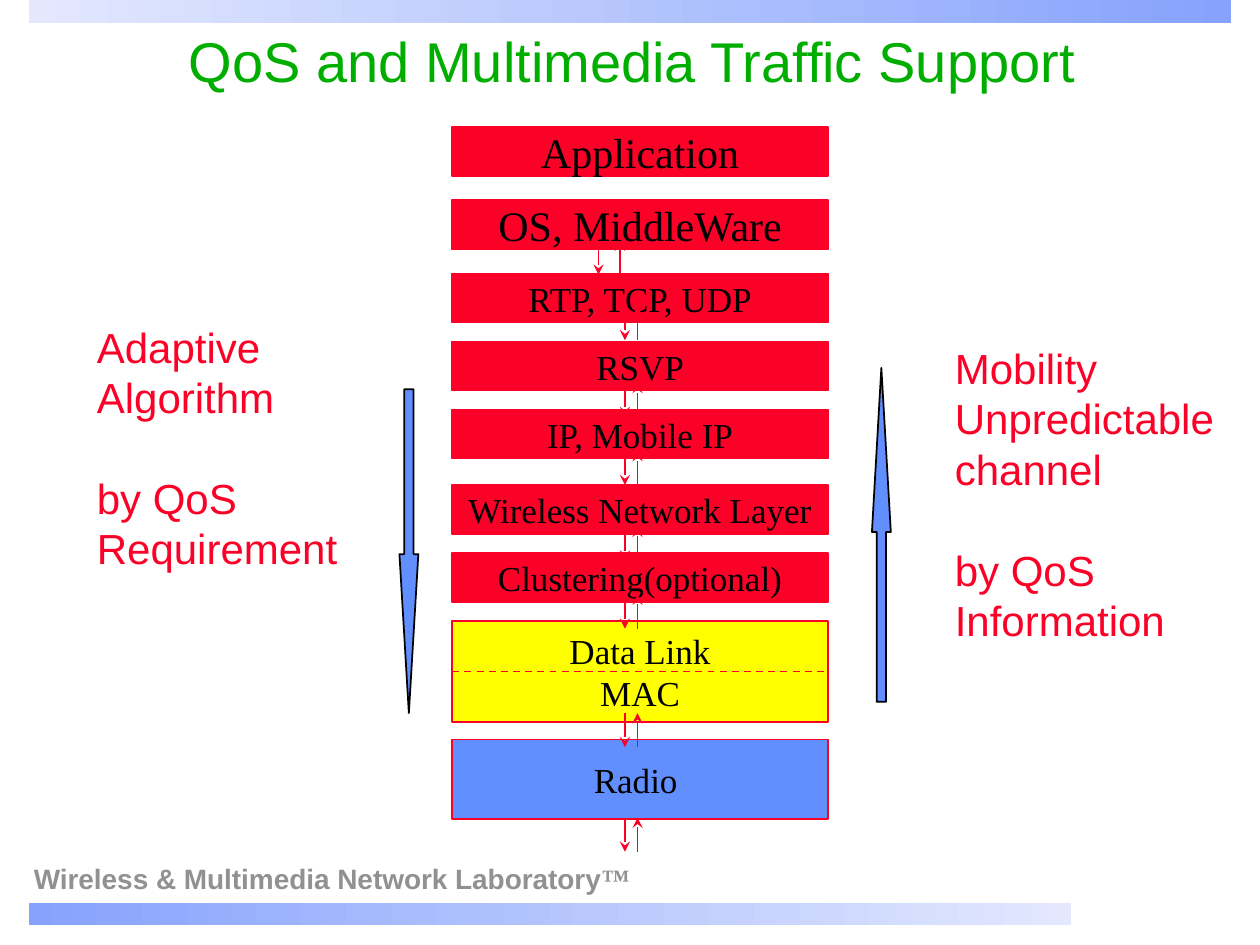
from typing import NamedTuple

import pptx
import pptx.dml.color
import pptx.enum.dml
import pptx.enum.shapes
import pptx.enum.text
import pptx.oxml.ns
import pptx.util
from lxml import etree

Inches = pptx.util.Inches
Pt = pptx.util.Pt
Shapes = pptx.enum.shapes.MSO_SHAPE

COLORS = {
    "red": "FC0128", "yellow": "FFFF00", "blue": "618FFD", "green": "00AE00",
    "black": "000000", "gray": "919191", "band dark": "86A2FC", "band light": "E3E8FE",
}
SANS, SERIF = "Arial", "Times New Roman"
LAYER_LEFT, LAYER_WIDTH, LAYER_HEIGHT = 3.59, 2.98, 0.39
ARROW_LENGTH = 0.27


class Layer(NamedTuple):
    text: str
    top: float
    height: float = LAYER_HEIGHT
    fill: str = "red"
    size: int = 20


class Label(NamedTuple):
    text: str
    left: float
    top: float
    width: float
    height: float
    size: int
    color: str
    wrap: bool = False
    gap_before: int = -1  # index of the paragraph set apart by one line


class BlockArrow(NamedTuple):
    kind: Shapes
    left: float
    top: float
    height: float
    head: float


class Band(NamedTuple):
    left: float
    top: float
    width: float
    height: float
    start: str
    end: str


BANDS = [
    Band(0.23, 7.17, 8.27, 0.17, "band dark", "band light"),
    Band(0.23, 0, 9.54, 0.18, "band light", "band dark"),
]
LABELS = [
    Label("QoS and Multimedia Traffic Support", 1.4, 0.16, 7.52, 0.63, 32, "green", wrap=True),
    Label("Mobility\nUnpredictable\nchannel\nby QoS\nInformation",
          7.48, 2.67, 2.26, 2.5, 24, "red", gap_before=3),
    Label("Adaptive\nAlgorithm\nby QoS\nRequirement",
          0.67, 2.5, 2.11, 2.1, 24, "red", gap_before=2),
]
LAYERS = [
    Layer("Application", 1.01, size=24),
    Layer("OS, MiddleWare", 1.59, size=24),
    Layer("RTP, TCP, UDP", 2.17),
    Layer("RSVP", 2.71),
    Layer("IP, Mobile IP", 3.25),
    Layer("Wireless Network Layer", 3.85),
    Layer("Clustering(optional)", 4.39),
    Layer("Data Link\nMAC", 4.93, 0.8, "yellow"),
    Layer("Radio ", 5.87, 0.63, "blue"),
]
PAIR_TOPS = [2.43, 3.04, 3.58, 4.18, 4.72, 5.66, 6.49]
BLOCK_ARROWS = [
    BlockArrow(Shapes.DOWN_ARROW, 3.17, 3.09, 2.57, 8.41),
    BlockArrow(Shapes.UP_ARROW, 6.92, 2.92, 2.65, 8.68),
]


def rgb(name: str) -> pptx.dml.color.RGBColor:
    return pptx.dml.color.RGBColor.from_string(COLORS[name])


def style_run(span, font: str, size: int, color: str, bold: bool = False) -> None:
    span.font.name = font
    span.font.size = Pt(size)
    span.font.color.rgb = rgb(color)
    span.font.bold = bold


def add_box(page, kind: Shapes, left: float, top: float, width: float, height: float,
            fill: str, line: str):
    box = page.shapes.add_shape(kind, Inches(left), Inches(top), Inches(width), Inches(height))
    box.shadow.inherit = False
    box.fill.solid()
    box.fill.fore_color.rgb = rgb(fill)
    box.line.color.rgb = rgb(line)
    box.line.width = Pt(1)
    return box


def add_layer(page, layer: Layer):
    box = add_box(page, Shapes.RECTANGLE, LAYER_LEFT, layer.top, LAYER_WIDTH, layer.height,
                  layer.fill, "red")
    frame = box.text_frame
    frame.text = layer.text
    frame.word_wrap = False
    frame.vertical_anchor = pptx.enum.text.MSO_ANCHOR.MIDDLE
    for para in frame.paragraphs:
        para.alignment = pptx.enum.text.PP_ALIGN.CENTER
        style_run(para.runs[0], SERIF, layer.size, "black")
    return box


def add_line(page, x1: float, y1: float, x2: float, y2: float, arrow: bool = False):
    line = page.shapes.add_connector(pptx.enum.shapes.MSO_CONNECTOR.STRAIGHT,
                                     Inches(x1), Inches(y1), Inches(x2), Inches(y2))
    line.line.color.rgb = rgb("red")
    line.line.width = Pt(1)
    if arrow:
        tail = etree.SubElement(line.line._get_or_add_ln(), pptx.oxml.ns.qn("a:tailEnd"))
        tail.set("type", "stealth")
    etree.SubElement(line._element.spPr, pptx.oxml.ns.qn("a:effectLst"))
    return line


def add_arrow_pair(page, top: float, down_x: float = 4.96, up_x: float = 5.06) -> None:
    bottom = top + ARROW_LENGTH
    add_line(page, down_x, top, down_x, bottom, arrow=True)
    add_line(page, up_x, bottom, up_x, top, arrow=True)


def add_label(page, label: Label) -> None:
    box = page.shapes.add_textbox(Inches(label.left), Inches(label.top),
                                  Inches(label.width), Inches(label.height))
    frame = box.text_frame
    frame.text = label.text
    frame.word_wrap = label.wrap
    for index, para in enumerate(frame.paragraphs):
        style_run(para.runs[0], SANS, label.size, label.color)
        if index == label.gap_before:
            para.space_before = Pt(label.size * 1.2)


def add_band(page, band: Band) -> None:
    box = add_box(page, Shapes.RECTANGLE, band.left, band.top, band.width, band.height,
                  band.start, band.start)
    box.line.fill.background()
    box.fill.gradient()
    box.fill.gradient_angle = 0
    for stop, color in zip(box.fill.gradient_stops, (band.start, band.end)):
        stop.color.rgb = rgb(color)


def add_footer(page) -> None:
    box = page.shapes.add_textbox(Inches(0.17), Inches(6.82), Inches(5), Inches(0.34))
    box.text_frame.word_wrap = True
    para = box.text_frame.paragraphs[0]
    para.line_spacing = 0.9
    for text, font in (("Wireless & Multimedia Network Laboratory", SANS), ("™", SERIF)):
        span = para.add_run()
        span.text = text
        style_run(span, font, 16, "gray", bold=True)


def main() -> None:
    deck = pptx.Presentation()
    deck.slide_width, deck.slide_height = Inches(10), Inches(7.5)
    page = deck.slides.add_slide(deck.slide_layouts[6])

    # Frame and texts
    for band in BANDS:
        add_band(page, band)
    add_footer(page)
    for label in LABELS:
        add_label(page, label)

    # Protocol stack; the first arrow pair starts behind its boxes
    add_arrow_pair(page, 1.91, down_x=4.75, up_x=4.92)
    boxes = {layer.text: add_layer(page, layer) for layer in LAYERS}
    for top in PAIR_TOPS:
        add_arrow_pair(page, top)

    # Dashed divider between Data Link and MAC
    divider = add_line(page, LAYER_LEFT, 5.33, LAYER_LEFT + LAYER_WIDTH, 5.33)
    divider.line.dash_style = pptx.enum.dml.MSO_LINE.DASH
    divider.begin_connect(boxes["Data Link\nMAC"], 1)
    divider.end_connect(boxes["Data Link\nMAC"], 3)

    # Block arrows beside the stack
    for arrow in BLOCK_ARROWS:
        shape = add_box(page, arrow.kind, arrow.left, arrow.top, 0.15, arrow.height,
                        "blue", "black")
        shape.adjustments[0] = 0.5
        shape.adjustments[1] = arrow.head

    deck.save("out.pptx")


if __name__ == "__main__":
    main()
